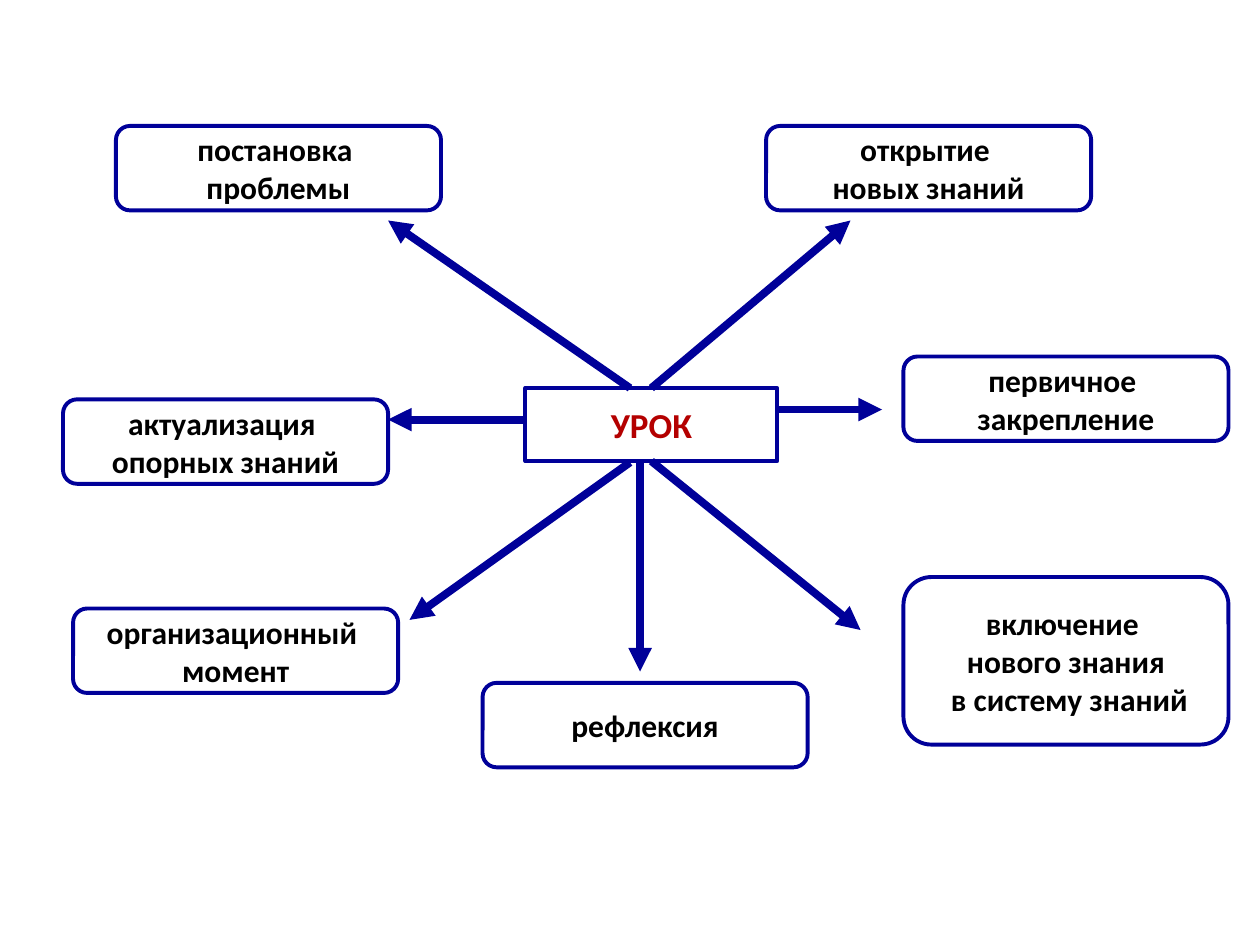
from dataclasses import dataclass

from pptx import Presentation
from pptx.dml.color import RGBColor
from pptx.enum.shapes import MSO_CONNECTOR as Connector, MSO_SHAPE as Shape
from pptx.enum.text import MSO_ANCHOR as Anchor, PP_ALIGN as Align
from pptx.oxml.ns import qn
from pptx.util import Inches, Pt
from lxml.etree import SubElement


@dataclass(frozen=True)
class Theme:
    font: str = "Calibri"
    fill: RGBColor = RGBColor(0xFF, 0xFF, 0xFF)
    line: RGBColor = RGBColor(0x00, 0x00, 0x99)
    text: RGBColor = RGBColor(0x00, 0x00, 0x00)
    accent: RGBColor = RGBColor(0xB4, 0x00, 0x00)
    stage_size: Pt = Pt(18)
    center_size: Pt = Pt(20)
    border: Pt = Pt(2.25)
    arrow: Pt = Pt(4.5)


class SlideBuilder:
    def __init__(self, slide, theme):
        self.slide = slide
        self.theme = theme

    def box(self, kind, left, top, width, height, text, size, color):
        shape = self.slide.shapes.add_shape(
            kind, Inches(left), Inches(top), Inches(width), Inches(height))
        shape.shadow.inherit = False
        shape.fill.solid()
        shape.fill.fore_color.rgb = self.theme.fill
        shape.line.color.rgb = self.theme.line
        shape.line.width = self.theme.border
        text_frame = shape.text_frame
        text_frame.text = text
        text_frame.word_wrap = False
        text_frame.vertical_anchor = Anchor.MIDDLE
        for paragraph in text_frame.paragraphs:
            paragraph.alignment = Align.CENTER
            for run in paragraph.runs:
                run.font.name = self.theme.font
                run.font.size = size
                run.font.bold = True
                run.font.color.rgb = color
        return shape

    def center(self, left, top, width, height, text):
        return self.box(Shape.RECTANGLE, left, top, width, height, text,
                        self.theme.center_size, self.theme.accent)

    def stage(self, left, top, text, height=0.67):
        return self.box(Shape.ROUNDED_RECTANGLE, left, top, STAGE_WIDTH, height,
                        text, self.theme.stage_size, self.theme.text)

    def arrow(self, start, end, source=None, site=None):
        points = [Inches(value) for value in (*start, *end)]
        connector = self.slide.shapes.add_connector(Connector.STRAIGHT, *points)
        if source is not None:
            connector.begin_connect(source, site)
        connector.line.color.rgb = self.theme.line
        connector.line.width = self.theme.arrow
        line = connector.line._get_or_add_ln()
        SubElement(line, qn("a:tailEnd"), type="triangle")
        SubElement(connector._element.spPr, qn("a:effectLst"))
        return connector


STAGE_WIDTH = 2.58
TOP, BOTTOM = 0, 2

# Lesson stages: left, top, text and, where it differs, height
STAGES = [
    (7.17, 4.58, "включение \nнового знания\n в систему знаний", 1.33),
    (0.92, 1, "постановка \nпроблемы"),
    (0.58, 4.83, "организационный \nмомент"),
    (0.5, 3.17, "актуализация \nопорных знаний"),
    (3.83, 5.42, "рефлексия"),
    (6.08, 1, "открытие \nновых знаний"),
    (7.17, 2.83, "первичное \nзакрепление"),
]

# Arrows that leave the lesson box away from the middle of a side
FREE_ARROWS = [
    ((5, 3.08), (3.08, 1.75)),
    ((5.08, 3.67), (5.08, 5.33)),
    ((6.17, 3.25), (7, 3.25)),
    ((5, 3.67), (3.25, 4.92)),
    ((4.17, 3.33), (3.08, 3.33)),
]


def main():
    presentation = Presentation()
    presentation.slide_width = Inches(10)
    presentation.slide_height = Inches(7.5)
    slide = presentation.slides.add_slide(presentation.slide_layouts[6])
    builder = SlideBuilder(slide, Theme())

    # Lesson in the middle, stages around it
    lesson = builder.center(4.17, 3.08, 2, 0.58, "УРОК")
    for stage in STAGES:
        builder.stage(*stage)

    # Arrows from the lesson to its stages
    builder.arrow((5.17, 3.08), (6.75, 1.75), lesson, TOP)
    builder.arrow((5.17, 3.67), (6.83, 5), lesson, BOTTOM)
    for start, end in FREE_ARROWS:
        builder.arrow(start, end)

    presentation.save("out.pptx")


if __name__ == "__main__":
    main()
